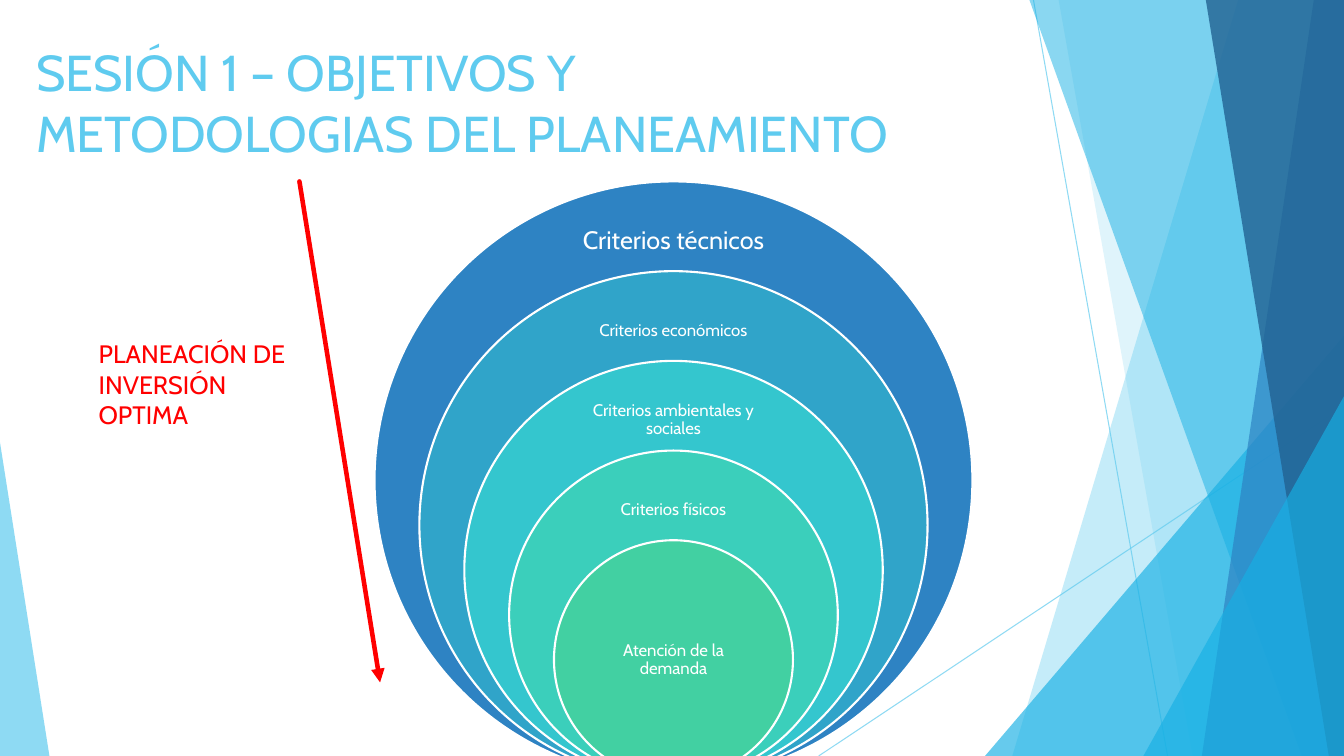
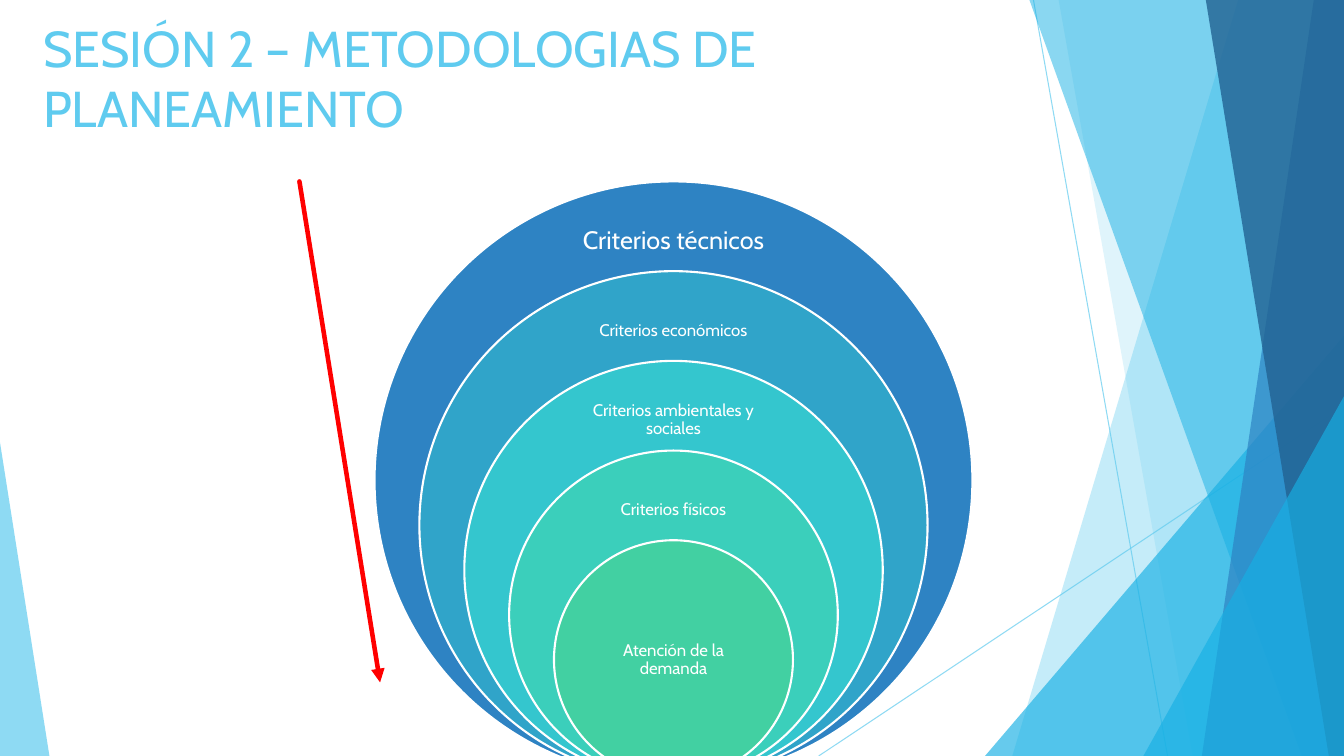
"""Build two session slides showing nested planning criteria."""
from lxml import etree
from pptx import Presentation, util as u
from pptx.dml.color import RGBColor
from pptx.enum import shapes, text
from pptx.oxml.ns import qn

WIDTH, HEIGHT = 13.33, 7.5
FONT = "Cabin"
COLOURS = {
    "sky": "5FCBEF", "cyan": "17B0E4", "blue": "2E83C3", "navy": "226292",
    "lake": "30A4C9", "turquoise": "34C6CE", "mint": "3BCFBB",
    "green": "42D0A2", "red": "FF0000", "white": "FFFFFF",
}
RAYS = [((10.25, 0), (11.58, HEIGHT)), ((WIDTH, 4.03), (8.12, HEIGHT))]
FACETS = [
    ("band", "sky", 36, 12.28, 10.04),
    ("band", "sky", 20, 10.5, 11.83),
    ("right triangle", "cyan", 66, 9.77, 3.33),
    ("band", "cyan", 50, 10.21, 12.91),
    ("band", "blue", 70, 13.03, 11.92),
    ("band", "navy", 80, 11.96, 13.18),
    ("right triangle", "cyan", 66, 11.34, 3.93),
    ("left triangle", "sky", 70, 0.49, 4.39),
]
RINGS = [
    ("Criterios técnicos", "blue", 18, 2.22),
    ("Criterios económicos", "lake", 12, 2.17),
    ("Criterios ambientales y sociales", "turquoise", 12, 2.15),
    ("Criterios físicos", "mint", 12, 1.76),
    ("Atención de la demanda", "green", 12, 1.68),
]
RING_CENTRE, RING_BOTTOM, RING_SIZE, RING_STEP = 6.68, 7.73, 5.93, 0.89
SESSIONS = [
    ("SESIÓN 1 – OBJETIVOS Y METODOLOGIAS DEL PLANEAMIENTO", 0.26, 0.36,
     "PLANEACIÓN DE\nINVERSIÓN OPTIMA"),
    ("SESIÓN 2 – METODOLOGIAS DE PLANEAMIENTO", 0.33, 0.12, None),
]


def paint(shape, colour, opacity=100, line=None):
    """Fill a shape, or stroke it when a line width is given."""
    target = shape.line.fill if line else shape.fill
    target.solid()
    target.fore_color.rgb = RGBColor.from_string(COLOURS[colour])
    properties = shape._element.spPr
    if line:
        shape.line.width = u.Pt(line)
    else:
        shape.line.fill.background()
    if opacity < 100:
        colour_node = properties.find(".//" + qn("a:srgbClr"))
        etree.SubElement(colour_node, qn("a:alpha"), val=str(opacity * 1000))
    if properties.find(qn("a:effectLst")) is None:
        etree.SubElement(properties, qn("a:effectLst"))


def write(page, words, left, top, width, height, size, colour, inset=None,
          align=None, anchor=text.MSO_ANCHOR.TOP, spacing=None):
    """Place a wrapped text box on the page."""
    box = page.shapes.add_textbox(*map(u.Inches, (left, top, width, height)))
    frame = box.text_frame
    frame.word_wrap = True
    frame.vertical_anchor = anchor
    if inset is not None:
        frame.margin_left = frame.margin_right = u.Inches(inset)
        frame.margin_top = frame.margin_bottom = u.Inches(inset)
    frame.text = words
    for para in frame.paragraphs:
        para.alignment = align
        para.line_spacing = spacing
        for span in para.runs:
            span.font.name = FONT
            span.font.size = u.Pt(size)
            span.font.color.rgb = RGBColor.from_string(COLOURS[colour])


deck = Presentation()
deck.slide_width, deck.slide_height = u.Inches(WIDTH), u.Inches(HEIGHT)

for title, title_left, title_top, caption in SESSIONS:
    page = deck.slides.add_slide(deck.slide_layouts[6])

    for start, end in RAYS:
        ray = page.shapes.add_connector(
            shapes.MSO_CONNECTOR.STRAIGHT, *map(u.Inches, start + end))
        paint(ray, "sky", 70, line=0.75)

    for kind, colour, opacity, first, second in FACETS:
        if kind == "band":
            outline = page.shapes.build_freeform(u.Inches(first), 0)
            corners = [(WIDTH, 0), (WIDTH, HEIGHT), (second, HEIGHT)]
            outline.add_line_segments(
                [(u.Inches(x), u.Inches(y)) for x, y in corners])
            facet = outline.convert_to_shape()
        else:
            on_right = kind == "right triangle"
            left, right = (first, WIDTH) if on_right else (0, first)
            facet = page.shapes.add_shape(
                shapes.MSO_SHAPE.ISOSCELES_TRIANGLE,
                *map(u.Inches, (left, second, right - left, HEIGHT - second)))
            facet.adjustments[0] = 1 if on_right else 0
        paint(facet, colour, opacity)

    write(page, title, title_left, title_top, 9.4, 1.44, 36, "sky")

    for index, (label, colour, size, label_width) in enumerate(RINGS):
        diameter = RING_SIZE - index * RING_STEP
        top = RING_BOTTOM - diameter
        ring = page.shapes.add_shape(
            shapes.MSO_SHAPE.OVAL,
            *map(u.Inches, (RING_CENTRE - diameter / 2, top, diameter, diameter)))
        paint(ring, colour)
        paint(ring, "white", line=1.5)
        innermost = index == len(RINGS) - 1
        write(page, label, RING_CENTRE - label_width / 2,
              top + (0.59 if innermost else 0.3), label_width,
              1.19 if innermost else 0.58, size, "white",
              inset=0.14 if size == 18 else 0.09,
              align=text.PP_ALIGN.CENTER, anchor=text.MSO_ANCHOR.MIDDLE,
              spacing=0.9)

    arrow = page.shapes.add_connector(
        shapes.MSO_CONNECTOR.STRAIGHT, *map(u.Inches, (2.97, 1.8, 3.77, 6.77)))
    paint(arrow, "red", line=3.25)
    stroke = arrow._element.spPr.find(qn("a:ln"))
    stroke.set("cap", "rnd")
    etree.SubElement(stroke, qn("a:tailEnd"), type="triangle")

    if caption:
        write(page, caption, 0.88, 3.31, 2.32, 0.71, 18, "red")

deck.save("out.pptx")
